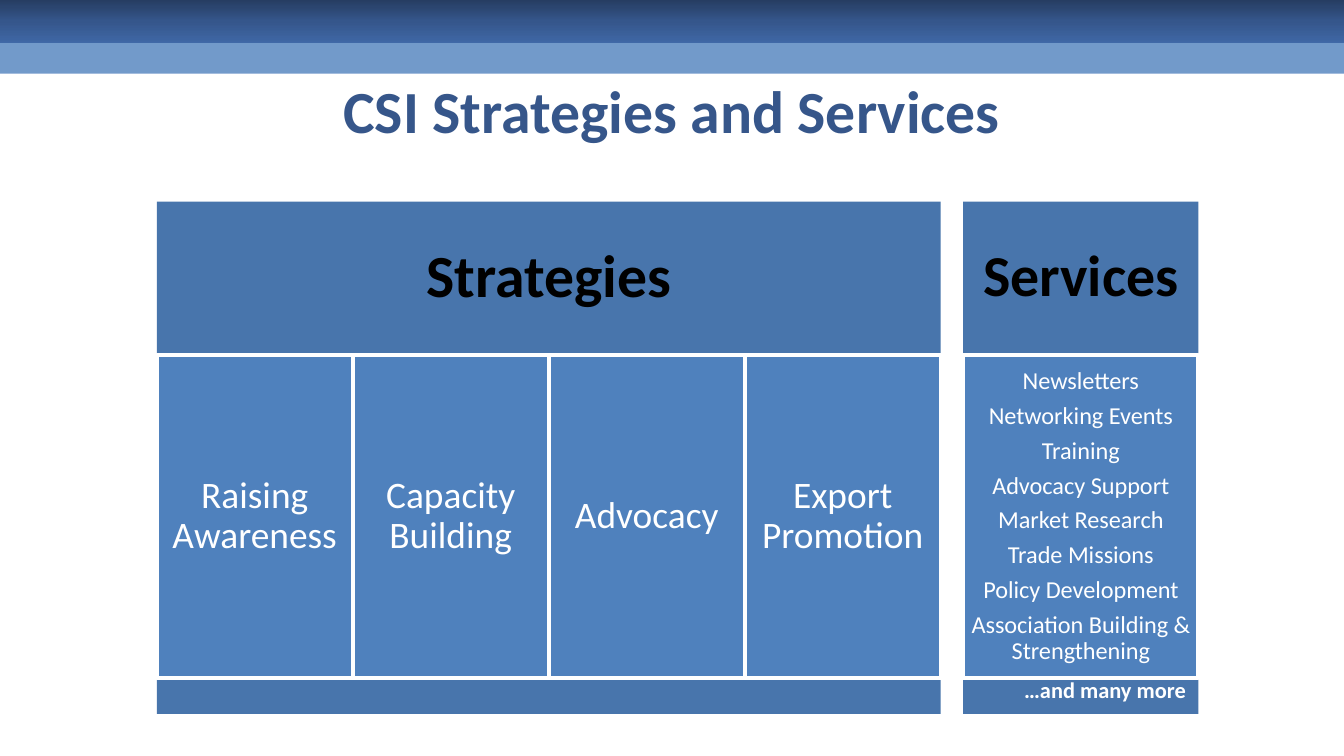
"""Builds the CSI Strategies and Services slide."""
from copy import deepcopy

from lxml import etree
from pptx import Presentation
from pptx.dml.color import RGBColor
from pptx.enum.shapes import MSO_SHAPE
from pptx.enum.text import MSO_ANCHOR, PP_ALIGN
from pptx.oxml.ns import qn
from pptx.util import Pt

RECT = MSO_SHAPE.RECTANGLE
MIDDLE, TOP = MSO_ANCHOR.MIDDLE, MSO_ANCHOR.TOP
CENTER = PP_ALIGN.CENTER
DARK, BLUE, WHITE, BLACK = "4875AC", "4F81BD", "FFFFFF", "000000"


def rgb(value):
    return RGBColor.from_string(value)


def write(shape, lines, size, color, bold=False, inset=(0, 0), anchor=MIDDLE, spacing=0.9, after=0.35):
    frame = shape.text_frame
    frame.text = "\n".join(lines)
    frame.word_wrap = True
    frame.vertical_anchor = anchor
    frame.margin_left = frame.margin_right = Pt(inset[0])
    frame.margin_top = frame.margin_bottom = Pt(inset[1])
    for paragraph in frame.paragraphs:
        paragraph.alignment = CENTER
        paragraph.line_spacing = spacing
        paragraph.space_after = Pt(round(size * after, 2))
        for run in paragraph.runs:
            run.font.name = "Calibri"
            run.font.size = Pt(size)
            run.font.bold = bold
            run.font.color.rgb = rgb(color)


prs = Presentation()
prs.slide_width, prs.slide_height = Pt(720), Pt(405)
slide = prs.slides.add_slide(prs.slide_layouts[6])
shapes = slide.shapes

banner = shapes.add_shape(RECT, Pt(0), Pt(0), Pt(720), Pt(23))
banner.shadow.inherit = False
banner.line.fill.background()
banner.fill.gradient()
banner.fill.gradient_angle = 270
stop_list = banner._element.spPr.find(qn("a:gradFill")).find(qn("a:gsLst"))
stop_list.insert(1, deepcopy(stop_list[0]))
for stop, (position, color) in zip(
    banner.fill.gradient_stops, [(0, "263D62"), (0.5, "35568B"), (1, "3F67A5")]
):
    stop.position = position
    stop.color.rgb = rgb(color)

stripe = shapes.add_shape(RECT, Pt(0), Pt(23), Pt(720), Pt(16.5))
stripe.shadow.inherit = False
stripe.line.fill.background()
stripe.fill.solid()
stripe.fill.fore_color.rgb = rgb(BLUE)
stripe_color = stripe._element.spPr.find(qn("a:solidFill"))[0]
etree.SubElement(stripe_color, qn("a:alpha"), val="80000")

title = shapes.add_textbox(Pt(36), Pt(40.5), Pt(648), Pt(36))
write(title, ["CSI Strategies and Services"], 32, "36568A", True, spacing=1, after=0)

services = [
    "Newsletters",
    "Networking Events",
    "Training",
    "Advocacy Support",
    "Market Research",
    "Trade Missions",
    "Policy Development",
    "Association Building & Strengthening",
]
strategies = ["Raising Awareness", "Capacity Building", "Advocacy", "Export Promotion"]
panels = [
    ("Strategies", 32, 84, 420, [[name] for name in strategies], 20, 6),
    ("Services", 31, 516, 126, [services], 13, 3.6),
]
for heading, heading_size, left, width, cells, cell_size, cell_inset in panels:
    header = shapes.add_shape(RECT, Pt(left), Pt(108), Pt(width), Pt(82))
    footer = shapes.add_shape(RECT, Pt(left), Pt(363.3), Pt(width), Pt(19.2))
    for bar in (header, footer):
        bar.shadow.inherit = False
        bar.line.fill.background()
        bar.fill.solid()
        bar.fill.fore_color.rgb = rgb(DARK)
    write(header, [heading], heading_size, BLACK, True, (9, 9))

    cell_width = width / len(cells)
    for column, lines in enumerate(cells):
        cell = shapes.add_shape(
            RECT, Pt(left + column * cell_width), Pt(190.3), Pt(cell_width), Pt(173)
        )
        cell.shadow.inherit = False
        cell.fill.solid()
        cell.fill.fore_color.rgb = rgb(BLUE)
        cell.line.color.rgb = rgb(WHITE)
        cell.line.width = Pt(2)
        write(cell, lines, cell_size, WHITE, inset=(cell_inset, cell_inset))

closing = shapes.add_textbox(Pt(528), Pt(360), Pt(128), Pt(18))
write(closing, ["…and many more"], 12, WHITE, True, (3.6, 2), TOP, 1, 0)

prs.save("out.pptx")
